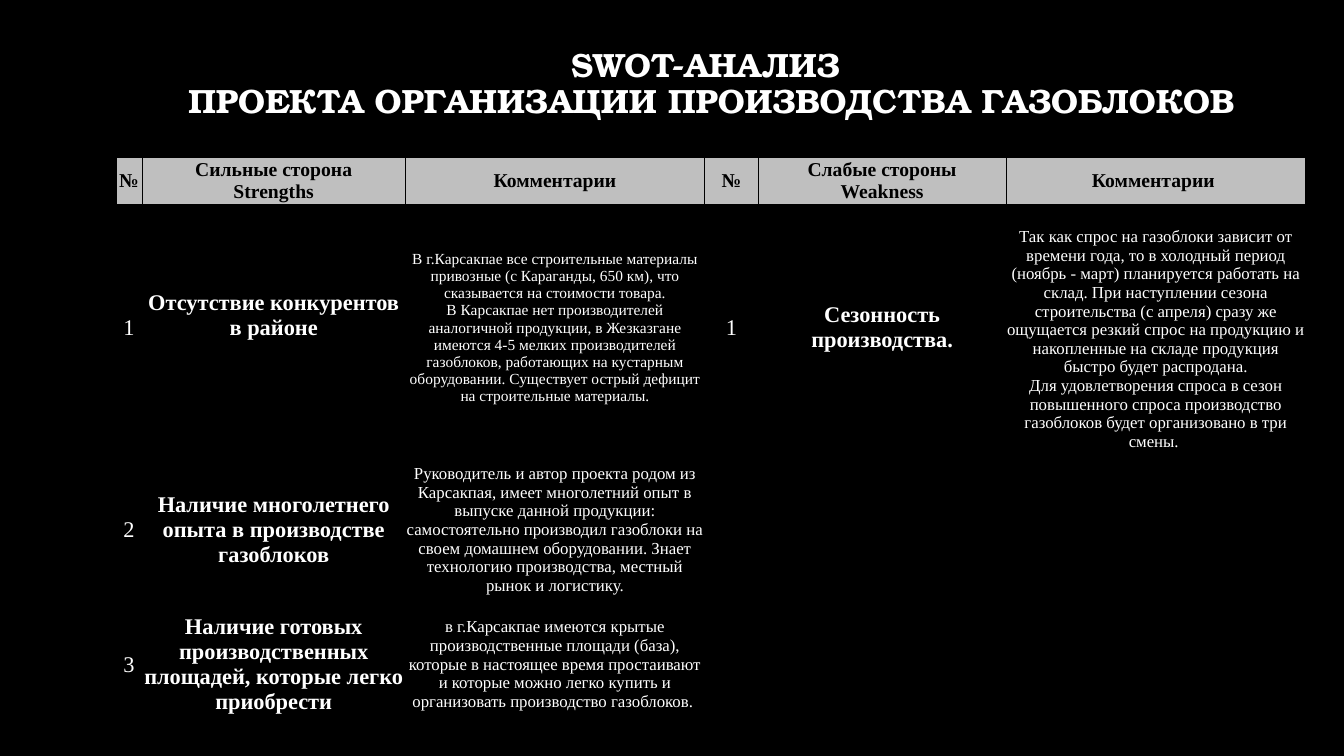
from dataclasses import dataclass

from lxml import etree
from pptx import Presentation
from pptx.dml.color import RGBColor
from pptx.enum.text import MSO_ANCHOR, PP_ALIGN
from pptx.oxml.ns import qn
from pptx.util import Inches, Pt

CENTER = PP_ALIGN.CENTER
MIDDLE = MSO_ANCHOR.MIDDLE
BOTTOM = MSO_ANCHOR.BOTTOM

BLACK, WHITE, GRAY = "000000", "FFFFFF", "BFBFBF"
TITLE_FONT, TABLE_FONT = "TeX Gyre Bonum", "Times New Roman"

COLUMN_WIDTHS = [0.26, 2.61, 2.97, 0.53, 2.46, 2.97]
ROW_HEIGHTS = [0.43, 2.45, 1.56, 1.11]
HALF = 3  # columns per half of the table: number, side, comment


@dataclass
class Entry:
    text: str
    size: float = 12
    bold: bool = False
    color: str = WHITE
    anchor: MSO_ANCHOR = MIDDLE
    bottom_margin: float = 0


def header(text: str) -> Entry:
    return Entry(text, 14, True, BLACK)


def number(text: str) -> Entry:
    return Entry(text, 16)


def side(text: str, bottom_margin: float = 0) -> Entry:
    return Entry(text, 16, True, bottom_margin=bottom_margin)


ROWS = [
    [header("№"), header("Сильные сторона\nStrengths"), header("Комментарии"),
     header("№"), header("Слабые стороны\nWeakness"), header("Комментарии ")],
    [number("1"), side("Отсутствие конкурентов в районе", 0.25),
     Entry("В г.Карсакпае все строительные материалы привозные (с Караганды, 650 км), "
           "что сказывается на стоимости товара.\n"
           "В Карсакпае нет производителей аналогичной продукции, в Жезказгане имеются "
           "4-5 мелких производителей газоблоков, работающих на кустарным оборудовании. "
           "Существует острый дефицит на строительные материалы.", 11),
     number("1"), side("Сезонность производства."),
     Entry("Так как спрос на газоблоки зависит от времени года, то в холодный период "
           "(ноябрь - март) планируется работать на склад. При наступлении сезона "
           "строительства (с апреля) сразу же ощущается резкий спрос на продукцию и "
           "накопленные на складе продукция быстро будет распродана.\n"
           "Для удовлетворения спроса в сезон повышенного спроса производство "
           "газоблоков будет организовано в три смены. ", anchor=BOTTOM)],
    [number("2"), side("Наличие многолетнего опыта в производстве газоблоков"),
     Entry("Руководитель и автор проекта родом из Карсакпая, имеет многолетний опыт в "
           "выпуске данной продукции: самостоятельно производил газоблоки на своем "
           "домашнем оборудовании. Знает технологию производства, местный рынок и "
           "логистику.")],
    [number("3"),
     side("Наличие готовых производственных площадей, которые легко приобрести"),
     Entry("в г.Карсакпае имеются крытые производственные площади (база), которые в "
           "настоящее время простаивают и которые можно легко купить и организовать "
           "производство газоблоков. ")],
]


def rgb(value: str) -> RGBColor:
    return RGBColor.from_string(value)


def write(frame, entry: Entry, font_name: str) -> None:
    para = frame.paragraphs[0]
    para.alignment = CENTER
    for index, line in enumerate(entry.text.split("\n")):
        if index:
            para.add_line_break()
        span = para.add_run()
        span.text = line
        span.font.name = font_name
        span.font.size = Pt(entry.size)
        span.font.bold = entry.bold
        span.font.color.rgb = rgb(entry.color)


def add_borders(cell, row: int, column: int) -> None:
    """Thick lines frame the header and each half; the rest are thin."""
    thick_sides = {
        "a:lnL": column % HALF == 0,
        "a:lnR": column % HALF == HALF - 1,
        "a:lnT": row <= 1,
        "a:lnB": row == 0,
    }
    properties = cell._tc.get_or_add_tcPr()
    for tag, thick in thick_sides.items():
        line = etree.SubElement(properties, qn(tag), w=str(Pt(1 if thick else 0.5)))
        fill = etree.SubElement(line, qn("a:solidFill"))
        etree.SubElement(fill, qn("a:srgbClr"), val=BLACK)


def fill_cell(cell, entry: Entry) -> None:
    cell.margin_left = cell.margin_right = cell.margin_top = 0
    cell.margin_bottom = Inches(entry.bottom_margin)
    cell.vertical_anchor = entry.anchor
    write(cell.text_frame, entry, TABLE_FONT)


def add_title(page) -> None:
    box = page.shapes.add_textbox(Inches(1.74), Inches(0.36), Inches(10.63), Inches(0.89))
    frame = box.text_frame
    frame.word_wrap = True
    frame.vertical_anchor = BOTTOM
    title = "SWOT-АНАЛИЗ \nПРОЕКТА ОРГАНИЗАЦИИ ПРОИЗВОДСТВА ГАЗОБЛОКОВ"
    write(frame, Entry(title, 24, True), TITLE_FONT)
    frame.paragraphs[0].line_spacing = 0.9


def add_swot_table(page) -> None:
    table = page.shapes.add_table(
        len(ROW_HEIGHTS), len(COLUMN_WIDTHS), Inches(1.15), Inches(1.56),
        Inches(sum(COLUMN_WIDTHS)), Inches(sum(ROW_HEIGHTS))).table
    table.first_row = table.horz_banding = False
    for column, width in zip(table.columns, COLUMN_WIDTHS):
        column.width = Inches(width)
    for row_index, height in enumerate(ROW_HEIGHTS):
        table.rows[row_index].height = Inches(height)
        for column_index in range(len(COLUMN_WIDTHS)):
            cell = table.cell(row_index, column_index)
            add_borders(cell, row_index, column_index)
            if row_index == 0:
                cell.fill.solid()
                cell.fill.fore_color.rgb = rgb(GRAY)
            else:
                cell.fill.background()
        for column_index, entry in enumerate(ROWS[row_index]):
            fill_cell(table.cell(row_index, column_index), entry)


def main() -> None:
    deck = Presentation()
    deck.slide_width, deck.slide_height = Inches(13.33), Inches(7.5)
    page = deck.slides.add_slide(deck.slide_layouts[6])

    # Black background
    page.background.fill.solid()
    page.background.fill.fore_color.rgb = rgb(BLACK)

    add_title(page)
    add_swot_table(page)
    deck.save("out.pptx")


if __name__ == "__main__":
    main()
